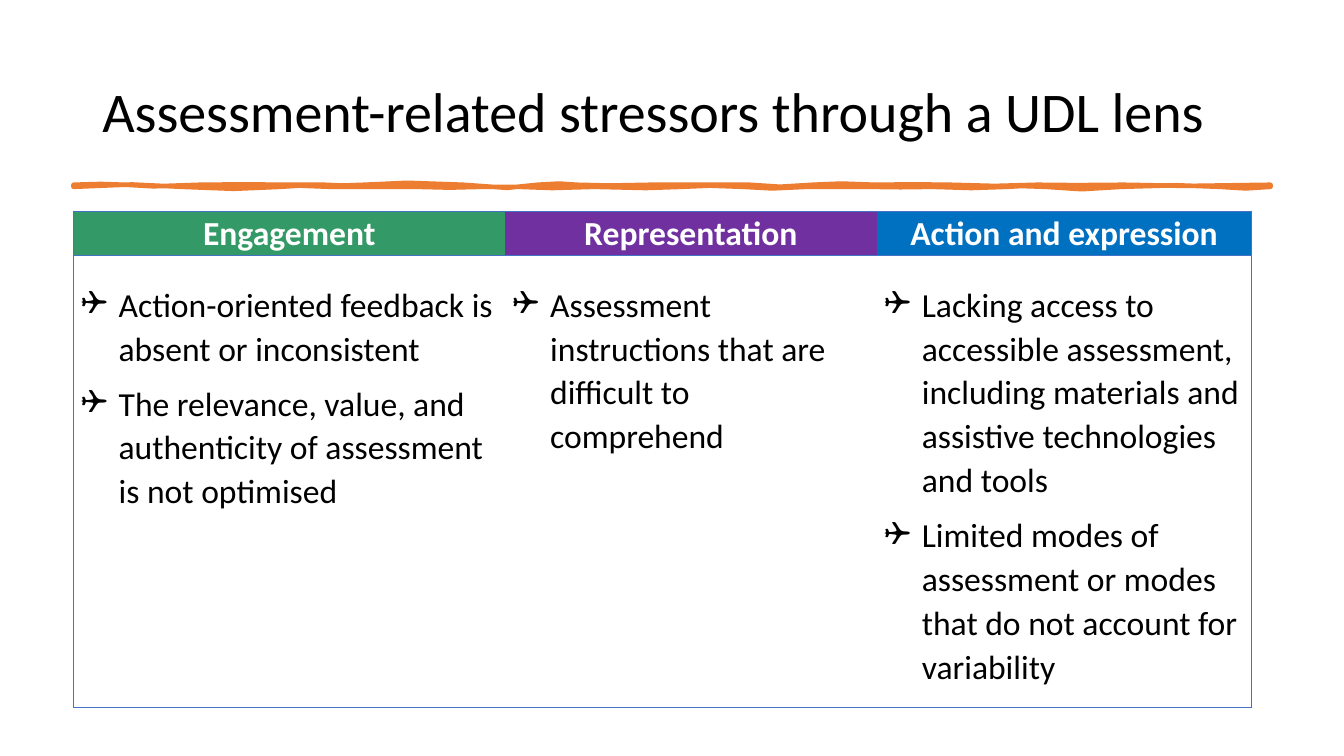
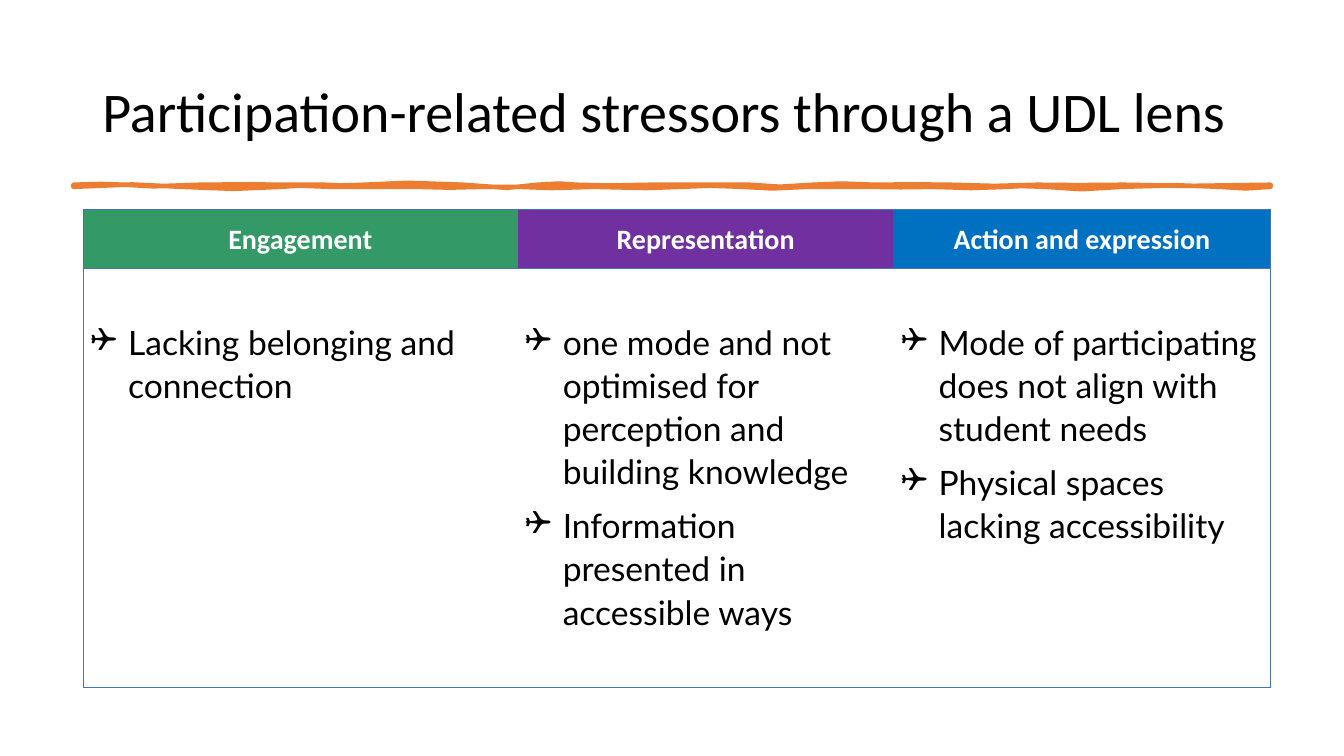
import dataclasses
import typing

import lxml.etree
import pptx
import pptx.dml.color
import pptx.enum.text
import pptx.oxml.ns
import pptx.util

PX = 9525
BLACK, WHITE, ORANGE, BORDER = "000000", "FFFFFF", "ED7D31", "4472C4"
HEADINGS = ("Engagement", "Representation", "Action and expression")
HEADING_FILLS = ("339966", "7030A0", "0070C0")
TITLE_FONT = "Calibri"
BULLET_FONT = "Wingdings"
CELL_INSET = 7
BULLET_INDENT = 36
RULE_LEFT, RULE_TOP, RULE_BOTTOM, RULE_RIGHT = 70, 176, 178, 1210
CURVE_STEPS = 2


class Ripple(typing.NamedTuple):
    x1: int
    dy1: int
    x2: int
    dy2: int
    end: int


@dataclasses.dataclass(frozen=True)
class StressorSlide:
    title: str
    left: int
    top: int
    widths: tuple[int, ...]
    heights: tuple[int, int]
    heading_size: int
    body_font: str
    body_top: int
    columns: tuple[tuple[str, ...], ...]


TOP_RIPPLES = [Ripple(*v) for v in (
    (85, -2, 107, 0, 119), (131, 1, 156, 3, 190), (225, -2, 241, 1, 273),
    (304, 0, 295, 0, 309), (324, 1, 328, 1, 347), (365, -1, 407, -4, 441),
    (474, 5, 496, 3, 512), (527, -2, 540, -1, 549), (558, 2, 600, 0, 620),
    (640, 1, 694, -1, 714), (734, 2, 751, 3, 774), (797, -2, 804, -1, 833),
    (863, 2, 877, -3, 905), (933, 4, 962, -1, 988), (1013, 2, 1035, -1, 1070),
    (1105, 2, 1151, 1, RULE_RIGHT),
)]
BOTTOM_RIPPLES = [Ripple(*v) for v in (
    (1192, 2, 1181, 2, 1162), (1142, -1, 1103, -3, 1068), (1032, 4, 1027, 2, 996),
    (965, -1, 977, -1, 959), (941, 2, 910, 1, 888), (866, 0, 849, 1, 828),
    (807, 0, 795, 0, 768), (742, 1, 727, 3, 708), (690, -2, 660, -1, 649),
    (636, 2, 599, 1, 566), (533, 0, 516, 3, 494), (474, -2, 471, 2, 458),
    (444, -1, 413, 3, 397), (383, -2, 356, 2, 315), (275, -2, 291, -1, 267),
    (243, 2, 204, 3, 173), (141, -3, 113, -3, RULE_LEFT),
)]

SLIDES = (
    StressorSlide(
        "Assessment-related stressors through a UDL lens",
        70, 201, (411, 354, 357), (42, 431), 24, "Calibri", 26,
        (
            ("Action-oriented feedback is absent or inconsistent",
             "The relevance, value, and authenticity of assessment is not optimised"),
            ("Assessment instructions that are difficult to comprehend",),
            ("Lacking access to accessible assessment, including materials and "
             "assistive technologies and tools",
             "Limited modes of assessment or modes that do not account for variability"),
        ),
    ),
    StressorSlide(
        "Participation-related stressors through a UDL lens",
        79, 199, (414, 358, 359), (57, 399), 20, "Lato", 48,
        (
            ("Lacking belonging and connection",),
            ("one mode and not optimised for perception and building knowledge",
             "Information presented in accessible ways"),
            ("Mode of participating does not align with student needs",
             "Physical spaces lacking accessibility"),
        ),
    ),
)


def px(value: float) -> int:
    return round(value * PX)


def rgb(value: str) -> pptx.dml.color.RGBColor:
    return pptx.dml.color.RGBColor.from_string(value)


def sub(parent, tag: str, **attrs: str):
    return lxml.etree.SubElement(parent, pptx.oxml.ns.qn(tag), attrs)


def set_font(p, name: str, size: int, color: str, bold: bool = False) -> None:
    p.font.name = name
    p.font.size = pptx.util.Pt(size)
    p.font.bold = bold
    p.font.color.rgb = rgb(color)


def add_title(s, text: str) -> None:
    tf = s.shapes.add_textbox(px(88), px(39), px(1104), px(139)).text_frame
    tf.word_wrap = True
    tf.vertical_anchor = pptx.enum.text.MSO_ANCHOR.MIDDLE
    p = tf.paragraphs[0]
    p.text = text
    p.line_spacing = 0.9
    set_font(p, TITLE_FONT, 40, BLACK)


def ripple_points(start: int, y: int, ripples: list[Ripple]) -> list[tuple[int, int]]:
    points = []
    for ripple in ripples:
        for step in range(1, CURVE_STEPS + 1):
            t = step / CURVE_STEPS
            u = 1 - t
            near, far = 3 * u * u * t, 3 * u * t * t
            x = u**3 * start + near * ripple.x1 + far * ripple.x2 + t**3 * ripple.end
            points.append((px(x), px(y + near * ripple.dy1 + far * ripple.dy2)))
        start = ripple.end
    return points


def add_brush_rule(s) -> None:
    builder = s.shapes.build_freeform(px(RULE_LEFT), px(RULE_TOP))
    builder.add_line_segments(ripple_points(RULE_LEFT, RULE_TOP, TOP_RIPPLES), close=False)
    builder.add_line_segments([(px(RULE_RIGHT), px(RULE_BOTTOM))], close=False)
    builder.add_line_segments(ripple_points(RULE_RIGHT, RULE_BOTTOM, BOTTOM_RIPPLES))
    sp = builder.convert_to_shape()
    sp.shadow.inherit = False
    sp.fill.solid()
    sp.fill.fore_color.rgb = rgb(ORANGE)
    sp.line.color.rgb = rgb(ORANGE)
    sp.line.width = pptx.util.Pt(3.25)


def set_borders(cell, edges: str) -> None:
    tc_pr = cell._tc.get_or_add_tcPr()
    for edge in "LRTB":
        ln = sub(tc_pr, f"a:ln{edge}", w=str(pptx.util.Pt(0.5)))
        if edge in edges:
            sub(sub(ln, "a:solidFill"), "a:srgbClr", val=BORDER)
        else:
            sub(ln, "a:noFill")


def format_cell(cell, edges: str, fill: str | None, top: int = 0) -> None:
    cell.margin_left = cell.margin_right = px(CELL_INSET)
    cell.margin_top, cell.margin_bottom = px(top), 0
    set_borders(cell, edges)
    if fill:
        cell.fill.solid()
        cell.fill.fore_color.rgb = rgb(fill)
    else:
        cell.fill.background()


def write_heading(cell, text: str, size: int) -> None:
    cell.vertical_anchor = pptx.enum.text.MSO_ANCHOR.MIDDLE
    p = cell.text_frame.paragraphs[0]
    p.text = text
    p.alignment = pptx.enum.text.PP_ALIGN.CENTER
    p.line_spacing = 1.07
    set_font(p, TITLE_FONT, size, WHITE, True)


def write_bullets(cell, items: tuple[str, ...], font: str) -> None:
    tf = cell.text_frame
    for i, item in enumerate(items):
        p = tf.add_paragraph() if i else tf.paragraphs[0]
        p.text = item
        p_pr = p._p.get_or_add_pPr()
        p_pr.set("marL", str(px(BULLET_INDENT)))
        p_pr.set("indent", str(-px(BULLET_INDENT)))
        sub(p_pr, "a:buFont", typeface=BULLET_FONT, charset="2")
        sub(p_pr, "a:buChar", char="❑")
        p.line_spacing = 1.07
        p.space_after = pptx.util.Pt(8)
        set_font(p, font, 24, BLACK)


def add_stressor_table(s, data: StressorSlide) -> None:
    table = s.shapes.add_table(
        2, len(HEADINGS), px(data.left), px(data.top),
        px(sum(data.widths)), px(sum(data.heights)),
    ).table
    table.first_row = table.horz_banding = False
    for row, height in zip(table.rows, data.heights):
        row.height = px(height)
    last = len(HEADINGS) - 1
    for i, (heading, fill) in enumerate(zip(HEADINGS, HEADING_FILLS)):
        table.columns[i].width = px(data.widths[i])
        sides = ("L" if i == 0 else "") + ("R" if i == last else "")
        head, body = table.cell(0, i), table.cell(1, i)
        format_cell(head, sides + "TB", fill)
        write_heading(head, heading, data.heading_size)
        format_cell(body, sides + "TB", None, data.body_top)
        write_bullets(body, data.columns[i], data.body_font)


def main() -> None:
    prs = pptx.Presentation()
    prs.slide_width, prs.slide_height = px(1280), px(720)
    for data in SLIDES:
        s = prs.slides.add_slide(prs.slide_layouts[6])
        add_title(s, data.title)
        add_brush_rule(s)
        add_stressor_table(s, data)
    prs.save("out.pptx")


if __name__ == "__main__":
    main()
